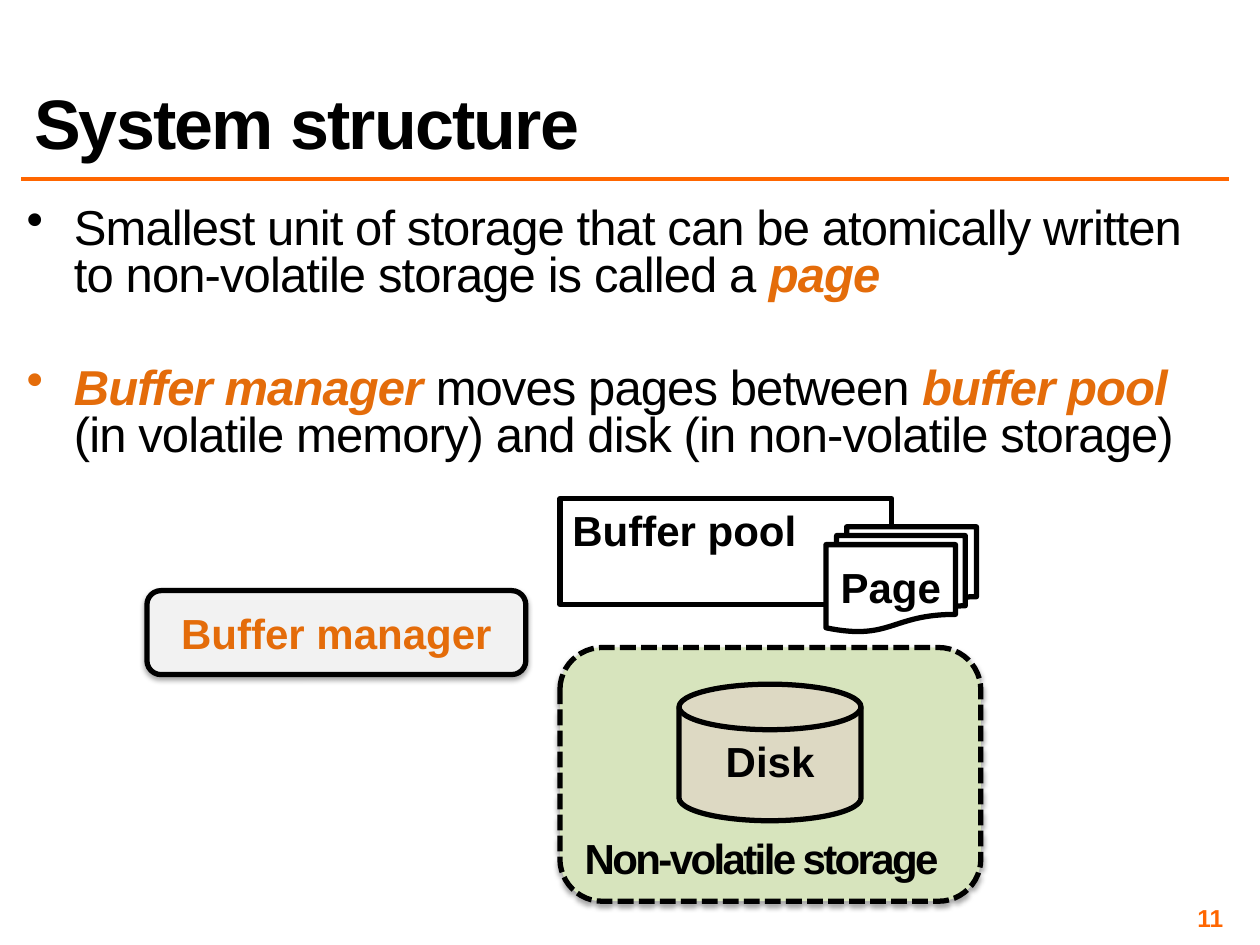
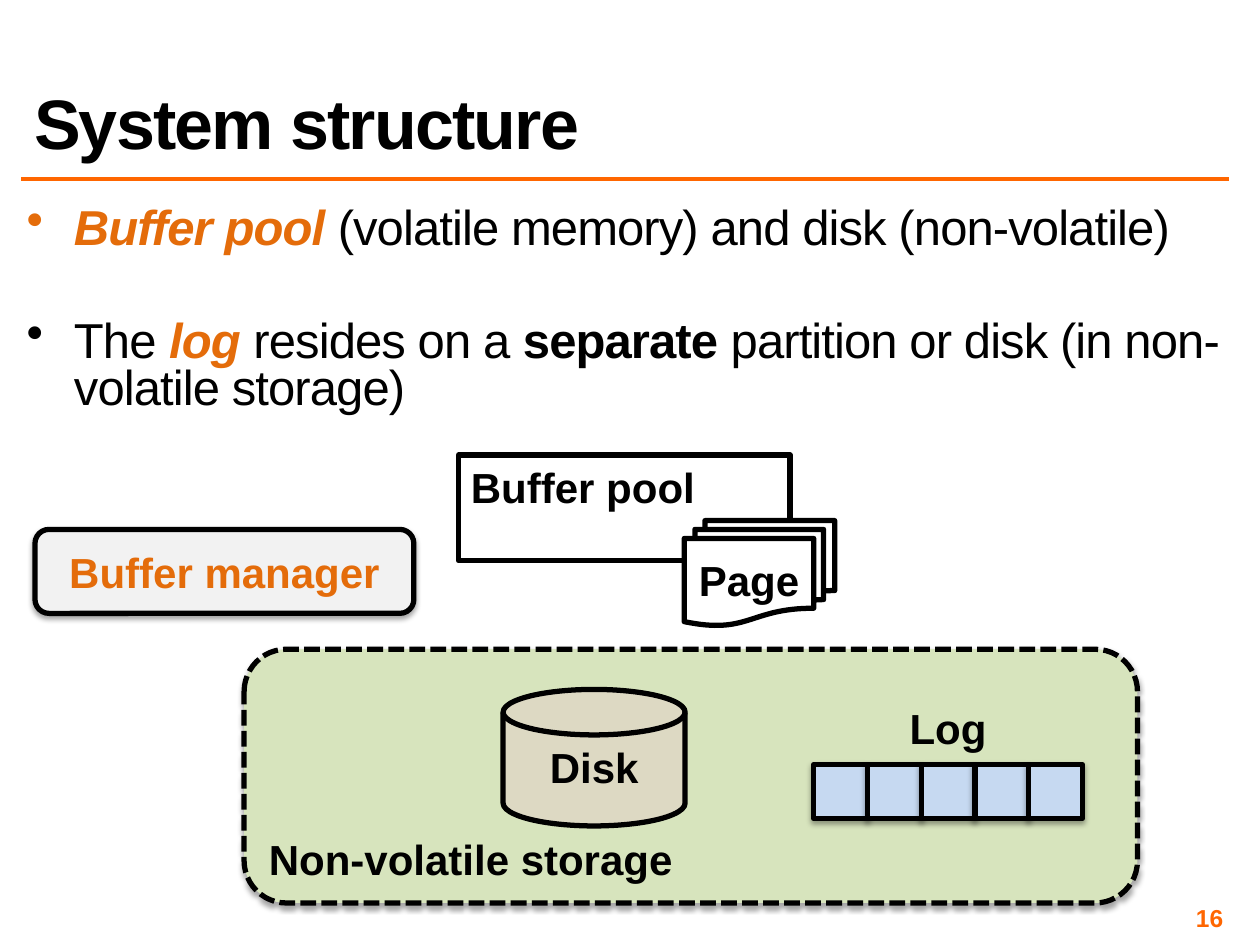
from lxml import etree
from pptx import Presentation
from pptx.dml.color import RGBColor
from pptx.enum.dml import MSO_LINE
from pptx.enum.shapes import MSO_CONNECTOR, MSO_SHAPE
from pptx.enum.text import MSO_ANCHOR, MSO_AUTO_SIZE, PP_ALIGN
from pptx.oxml.ns import qn
from pptx.util import Pt

BLACK = RGBColor(0x00, 0x00, 0x00)
WHITE = RGBColor(0xFF, 0xFF, 0xFF)
ORANGE = RGBColor(0xFF, 0x66, 0x00)
TERM = RGBColor(0xE4, 0x6C, 0x0A)
GREY = RGBColor(0xF2, 0xF2, 0xF2)
GREEN = RGBColor(0xD7, 0xE4, 0xBD)
TAN = RGBColor(0xDD, 0xD9, 0xC3)
BLUE = RGBColor(0xC6, 0xD9, 0xF1)
FONT = "Arial"
LEFT, CENTER, RIGHT = PP_ALIGN.LEFT, PP_ALIGN.CENTER, PP_ALIGN.RIGHT
TOP, MIDDLE, BOTTOM = MSO_ANCHOR.TOP, MSO_ANCHOR.MIDDLE, MSO_ANCHOR.BOTTOM

MARGIN, CONTENT_W = 12.25, 689.75
RULE_Y = 102.25
LABEL_SIZE = 24
LOG_CELLS, CELL = 5, 30.7

SLIDES = [
    {
        "title": "System structure",
        "number": "11",
        "bullets": [
            [("Smallest unit of storage that can be atomically written "
              "to non-volatile storage is called a ", ""), ("page", "term")],
            [("Buffer manager", "term"), (" moves pages between ", ""),
             ("buffer pool ", "term"),
             ("(in volatile memory) and disk (in non-volatile storage)", "")],
        ],
        "storage": (320, 370, 240.5, 145),
        "storage_spacing": -1.5,
        "pool": (320, 285),
        "manager": (84, 337.5),
        "page": (472, 301),
        "disk": (388, 391),
        "log": None,
    },
    {
        "title": "System structure",
        "number": "16",
        "bullets": [
            [("Buffer pool ", "term"),
             ("(volatile memory) and disk (non-volatile)", "")],
            [("The ", ""), ("log ", "term"), ("resides on a ", ""),
             ("separate", "bold"),
             (" partition or disk (in non-volatile storage)", "")],
        ],
        "storage": (139.5, 371, 510.5, 145),
        "storage_spacing": 0,
        "pool": (262, 260),
        "manager": (20, 302.5),
        "page": (391, 297.5),
        "disk": (287.5, 394),
        "log": (465, 437),
    },
]


def set_font(p, size, color, bold=True):
    p.font.name, p.font.size, p.font.bold = FONT, Pt(size), bold
    p.font.color.rgb = color


def set_spacing(r, points):
    r._r.get_or_add_rPr().set("spc", str(int(points * 100)))


def set_insets(tf, inset):
    tf.margin_left = tf.margin_right = Pt(inset)
    tf.margin_top = tf.margin_bottom = Pt(inset)


def add_shadow(sp):
    effects = sp._element.spPr.find(qn("a:effectLst"))
    shadow = etree.SubElement(effects, qn("a:outerShdw"), blurRad=str(Pt(3.1)),
                              dist=str(Pt(1.8)), dir="5400000", rotWithShape="0")
    color = etree.SubElement(shadow, qn("a:srgbClr"), val=str(BLACK))
    etree.SubElement(color, qn("a:alpha"), val="35000")


def write_label(tf, text, size=LABEL_SIZE, color=BLACK, align=CENTER, anchor=MIDDLE):
    tf.vertical_anchor = anchor
    p = tf.paragraphs[0]
    p.text, p.alignment = text, align
    set_font(p, size, color)
    return p


def add_box(slide, kind, box, fill=None, shadow=False):
    sp = slide.shapes.add_shape(kind, *map(Pt, box))
    sp.shadow.inherit = False
    if fill is None:
        sp.fill.background()
    else:
        sp.fill.solid()
        sp.fill.fore_color.rgb = fill
    sp.line.color.rgb, sp.line.width = BLACK, Pt(3)
    if shadow:
        add_shadow(sp)
    return sp


def add_textbox(slide, box, wrap=True):
    tf = slide.shapes.add_textbox(*map(Pt, box)).text_frame
    tf.word_wrap = wrap
    return tf


def add_frame(slide, title, number):
    rule = slide.shapes.add_connector(MSO_CONNECTOR.STRAIGHT, Pt(MARGIN), Pt(RULE_Y),
                                      Pt(MARGIN + CONTENT_W), Pt(RULE_Y))
    rule.line.color.rgb, rule.line.width = ORANGE, Pt(2)
    etree.SubElement(rule._element.spPr, qn("a:effectLst"))

    sp = slide.shapes.title
    sp.left, sp.top, sp.width, sp.height = map(Pt, (MARGIN, MARGIN, CONTENT_W, 84.25))
    tf = sp.text_frame
    tf.auto_size = MSO_AUTO_SIZE.NONE
    p = write_label(tf, title, 40, BLACK, LEFT, BOTTOM)
    p.line_spacing = 0.8
    set_spacing(p.runs[0], -1)

    tf = add_textbox(slide, (534, 516, 168, 17))
    set_insets(tf, 3)
    write_label(tf, number, 14, ORANGE, RIGHT)


def add_bullets(slide, bullets):
    tf = add_textbox(slide, (MARGIN, 116, CONTENT_W, 141))
    set_insets(tf, 3)
    for i, parts in enumerate(bullets):
        p = tf.paragraphs[0] if i == 0 else tf.add_paragraph()
        p.line_spacing = 0.8
        p.space_before = Pt(37.5 if i else 5.5)
        set_font(p, 28, BLACK, False)
        pPr = p._p.get_or_add_pPr()
        pPr.set("marL", str(Pt(27)))
        pPr.set("indent", str(Pt(-27)))
        bullet = etree.Element(qn("a:buChar"), char="•")
        pPr.find(qn("a:defRPr")).addprevious(bullet)
        for text, style in parts:
            r = p.add_run()
            r.text = text
            r.font.bold = style != ""
            r.font.italic = style == "term"
            r.font.color.rgb = TERM if style == "term" else BLACK
            set_spacing(r, -0.5)


def add_storage(slide, box, spacing):
    sp = add_box(slide, MSO_SHAPE.ROUNDED_RECTANGLE, box, GREEN, True)
    sp.line.dash_style = MSO_LINE.SQUARE_DOT
    p = write_label(sp.text_frame, "Non-volatile storage", align=LEFT, anchor=BOTTOM)
    set_spacing(p.runs[0], spacing)


def add_log(slide, left, top):
    width = LOG_CELLS * CELL
    tf = add_textbox(slide, (left + width / 2 - 29.5, top - 39, 59, 36), False)
    write_label(tf, "Log", anchor=TOP)
    for i in range(LOG_CELLS):
        add_box(slide, MSO_SHAPE.RECTANGLE, (left + i * CELL, top, CELL, CELL), BLUE, True)


def add_diagram(slide, s):
    add_storage(slide, s["storage"], s["storage_spacing"])
    disk = add_box(slide, MSO_SHAPE.FLOWCHART_MAGNETIC_DISK, (*s["disk"], 104, 78), TAN)
    write_label(disk.text_frame, "Disk", anchor=TOP)
    if s["log"]:
        add_log(slide, *s["log"])
    pool = add_box(slide, MSO_SHAPE.RECTANGLE, (*s["pool"], 189.5, 60.5))
    write_label(pool.text_frame, "Buffer pool", align=LEFT, anchor=TOP)
    manager = add_box(slide, MSO_SHAPE.FLOWCHART_ALTERNATE_PROCESS,
                      (*s["manager"], 216.5, 48), GREY, True)
    write_label(manager.text_frame, "Buffer manager", color=TERM)
    page = add_box(slide, MSO_SHAPE.FLOWCHART_MULTIDOCUMENT, (*s["page"], 86, 60), WHITE)
    page.text_frame.word_wrap = False
    write_label(page.text_frame, "Page")


def main():
    prs = Presentation()
    prs.slide_width, prs.slide_height = Pt(720), Pt(540)
    for s in SLIDES:
        slide = prs.slides.add_slide(prs.slide_layouts[5])
        add_frame(slide, s["title"], s["number"])
        add_bullets(slide, s["bullets"])
        add_diagram(slide, s)
    prs.save("out.pptx")


if __name__ == "__main__":
    main()
